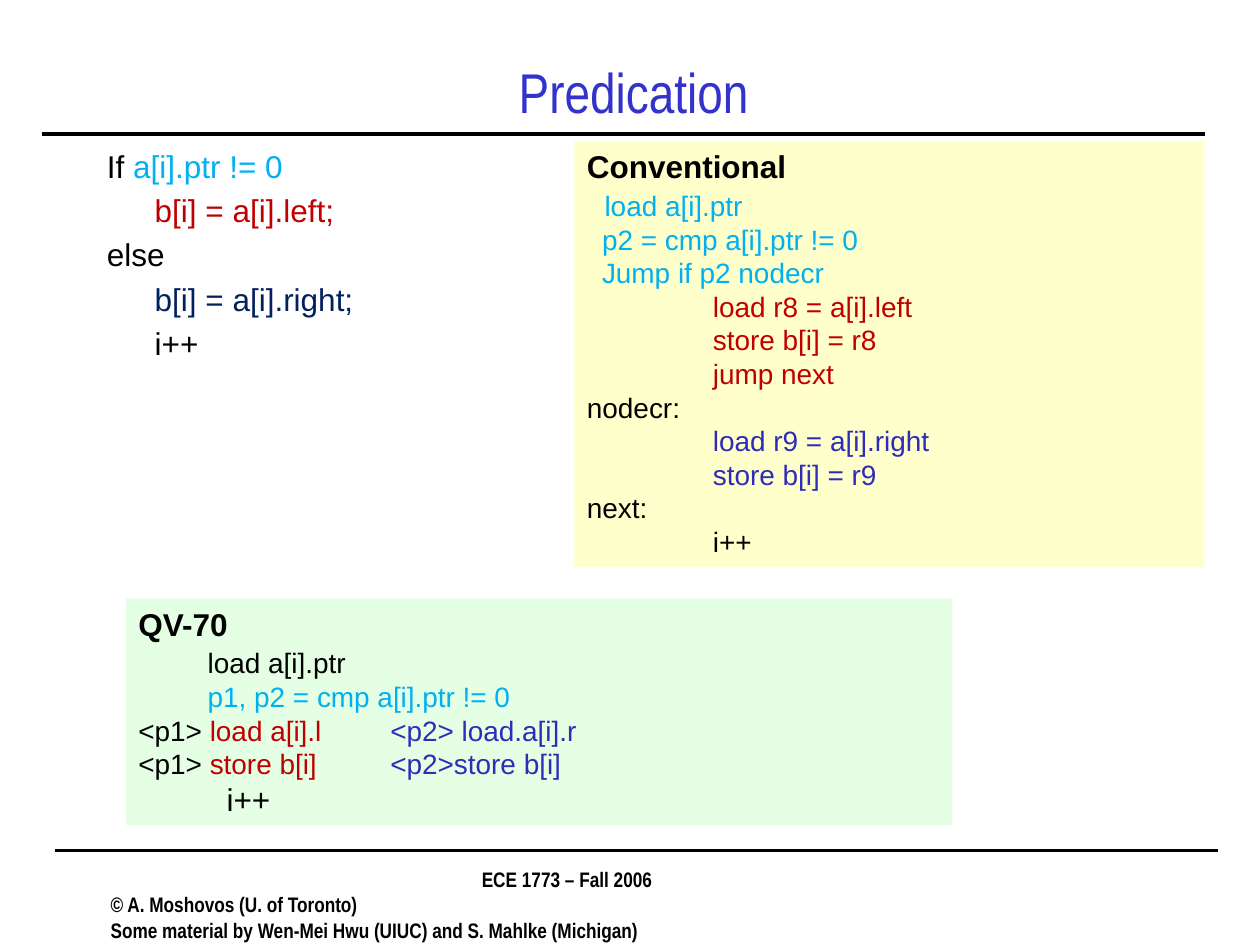
from dataclasses import dataclass

from lxml import etree
from pptx import Presentation
from pptx.dml.color import RGBColor
from pptx.enum.shapes import MSO_CONNECTOR, MSO_SHAPE
from pptx.enum.text import MSO_ANCHOR, PP_ALIGN
from pptx.oxml.ns import qn
from pptx.util import Inches, Pt

CENTER, LEFT = PP_ALIGN.CENTER, PP_ALIGN.LEFT
TOP, MIDDLE = MSO_ANCHOR.TOP, MSO_ANCHOR.MIDDLE
RECTANGLE, STRAIGHT = MSO_SHAPE.RECTANGLE, MSO_CONNECTOR.STRAIGHT

BLACK, TITLE_BLUE = "000000", "3333CC"
CYAN, RED, NAVY, BLUE = "00B0F0", "C00000", "002060", "2D2DB9"
YELLOW, GREEN = "FFFFCC", "CCFFCC"


@dataclass
class Line:
    """One line of text: (words, colour) runs and the line's format."""
    runs: list[tuple[str, str]]
    indent: float = 0
    size: float = 16
    bold: bool = False
    before: float = 0
    align: PP_ALIGN = LEFT
    tab: float = 0


@dataclass
class Box:
    left: float
    top: float
    width: float
    height: float


def color(value: str) -> RGBColor:
    return RGBColor.from_string(value)


def write_text(shape, lines: list[Line], *, font: str = "Arial", anchor=TOP) -> None:
    frame = shape.text_frame
    frame.word_wrap = True
    frame.vertical_anchor = anchor
    for number, line in enumerate(lines):
        paragraph = frame.add_paragraph() if number else frame.paragraphs[0]
        paragraph.alignment = line.align
        paragraph.space_before = Pt(line.before)
        properties = paragraph._p.get_or_add_pPr()
        properties.set("marL", str(Inches(line.indent)))
        if line.tab:
            tabs = etree.SubElement(properties, qn("a:tabLst"))
            etree.SubElement(tabs, qn("a:tab"), pos=str(Inches(line.tab)), algn="l")
        for words, ink in line.runs:
            run = paragraph.add_run()
            run.text = words
            run.font.name = font
            run.font.size = Pt(line.size)
            run.font.bold = line.bold
            run.font.color.rgb = color(ink)


def place(box: Box) -> list[int]:
    return [Inches(n) for n in (box.left, box.top, box.width, box.height)]


def add_text(slide, box: Box, lines: list[Line], **text_format) -> None:
    write_text(slide.shapes.add_textbox(*place(box)), lines, **text_format)


def add_panel(slide, box: Box, fill: str, lines: list[Line], opacity: int = 100) -> None:
    shape = slide.shapes.add_shape(RECTANGLE, *place(box))
    shape.shadow.inherit = False
    shape.line.fill.background()
    shape.fill.solid()
    shape.fill.fore_color.rgb = color(fill)
    if opacity < 100:
        fill_color = shape._element.spPr.find(qn("a:solidFill"))[0]
        etree.SubElement(fill_color, qn("a:alpha")).set("val", str(opacity * 1000))
    write_text(shape, lines)


def add_rule(slide, left: float, top: float, width: float = 9.23) -> None:
    rule = slide.shapes.add_connector(
        STRAIGHT, Inches(left), Inches(top), Inches(left + width), Inches(top))
    rule.line.color.rgb = color(BLACK)
    rule.line.width = Pt(2.25)
    etree.SubElement(rule._element.spPr, qn("a:effectLst"))


def source_line(*runs: tuple[str, str], indent: float = 0) -> Line:
    return Line(list(runs), indent, size=18, before=3.6)


def heading(words: str) -> Line:
    return Line([(words, BLACK)], size=18, bold=True)


def code(words: str, ink: str = BLACK, indent: float = 0, **line_format) -> Line:
    return Line([(words, ink)], indent, **line_format)


def predicated_pair(first: str, second: str) -> Line:
    return Line([("<p1> ", BLACK), (first + "\t", RED), (second, BLUE)], tab=2)


def footer_line(words: str, align=LEFT) -> Line:
    return Line([(words, BLACK)], size=12, bold=True, align=align)


SOURCE = [
    source_line(("If ", BLACK), ("a[i].ptr != 0", CYAN)),
    source_line(("b[i] = a[i].left;", RED), indent=0.38),
    source_line(("else", BLACK)),
    source_line(("b[i] = a[i].right;", NAVY), indent=0.38),
    source_line(("i++", BLACK), indent=0.38),
]
CONVENTIONAL = [
    heading("Conventional"),
    code("load a[i].ptr", CYAN, 0.14, before=2),
    code("p2 = cmp a[i].ptr != 0", CYAN, 0.12),
    code("Jump if p2 nodecr", CYAN, 0.12),
    code("load r8 = a[i].left", RED, 1),
    code("store b[i] = r8", RED, 1),
    code("jump next", RED, 1),
    code("nodecr:"),
    code("load r9 = a[i].right", BLUE, 1),
    code("store b[i] = r9", BLUE, 1),
    code("next:"),
    code("i++", indent=1),
]
PREDICATED = [
    heading("QV-70"),
    code("load a[i].ptr", indent=0.55, before=2),
    code("p1, p2 = cmp a[i].ptr != 0", CYAN, 0.55),
    predicated_pair("load a[i].l", "<p2> load.a[i].r"),
    predicated_pair("store b[i]", "<p2>store b[i]"),
    code("i++", indent=0.7, size=18),
]
FOOTER = [
    footer_line("ECE 1773 – Fall 2006", CENTER),
    footer_line("© A. Moshovos (U. of Toronto)"),
    footer_line("Some material by Wen-Mei Hwu (UIUC) and S. Mahlke (Michigan)"),
]


def main() -> None:
    presentation = Presentation()
    presentation.slide_width, presentation.slide_height = Inches(10), Inches(7.5)
    slide = presentation.slides.add_slide(presentation.slide_layouts[6])

    # Rules, footer and title
    add_rule(slide, 0.33, 1.06)
    add_rule(slide, 0.44, 6.75)
    add_text(slide, Box(0.78, 6.83, 7.44, 0.5), FOOTER, font="Arial Narrow")
    title = Line([("Predication", TITLE_BLUE)], size=32, align=CENTER)
    add_text(slide, Box(0.78, 0.44, 8.5, 0.56), [title],
             font="Arial Narrow", anchor=MIDDLE)

    # Source code and its two translations
    add_text(slide, Box(0.75, 1.12, 3.36, 5.54), SOURCE)
    add_panel(slide, Box(4.56, 1.12, 5, 3.38), YELLOW, CONVENTIONAL)
    add_panel(slide, Box(1, 4.75, 6.56, 1.8), GREEN, PREDICATED, opacity=50)

    presentation.save("out.pptx")


if __name__ == "__main__":
    main()
